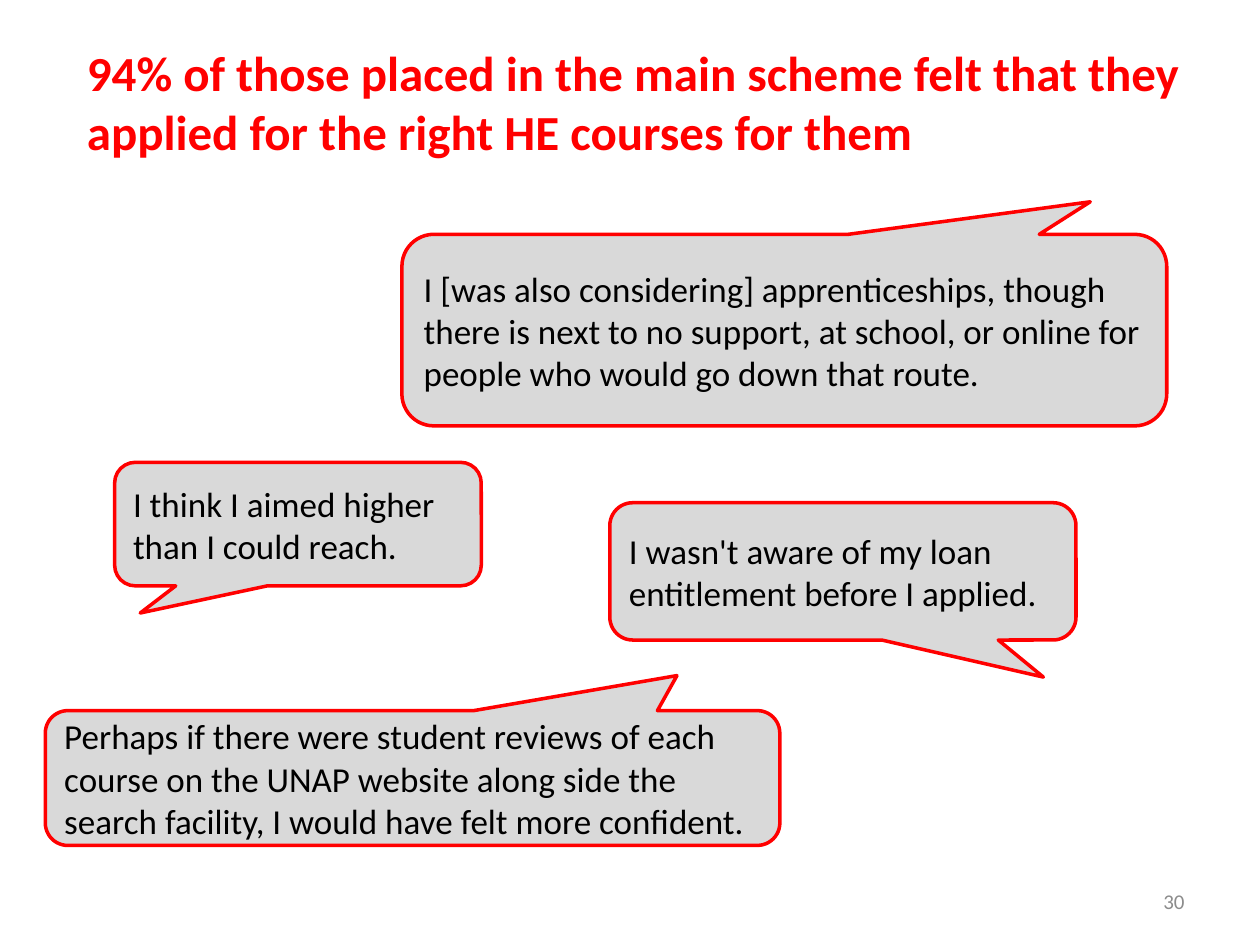
from pptx import Presentation, util as u
from pptx.dml.color import RGBColor
from pptx.enum import shapes, text

WIDTH, HEIGHT = u.Inches(10), u.Inches(7.5)
FONT = "Calibri"
RED, GREY, BLACK, MUTED = "FF0000", "D9D9D9", "000000", "8C8C8C"

# Places are left, top, width, height in percent of the slide
TITLE = "94% of those placed in the main scheme felt that they applied for the right HE courses for them"
TITLE_PLACE = (5.9, 3.87, 89.1, 13.87)
NUMBER = "30"
NUMBER_PLACE = (71.7, 92.67, 23.3, 5.33)

# Quote, place, pointer tip as shares of the bubble measured from its centre
QUOTES = [
    ("Perhaps if there were student reviews of each course on the UNAP website "
     "along side the search facility, I would have felt more confident.",
     (3.6, 75.2, 58.3, 14.27), (0.36, -0.76)),
    ("I wasn't aware of my loan entitlement before I applied.",
     (48.4, 53.2, 37, 14.53), (0.43, 0.77)),
    ("I think I aimed higher than I could reach.",
     (9.1, 48.93, 29.1, 13.07), (-0.43, 0.72)),
    ("I [was also considering] apprenticeships, though there is next to no support, "
     "at school, or online for people who would go down that route.",
     (31.9, 24.8, 60.7, 20.27), (0.4, -0.67)),
]


def color(value):
    return RGBColor.from_string(value)


def area(place):
    return [int(share * side / 100) for share, side in zip(place, (WIDTH, HEIGHT) * 2)]


def write(shape, words, size, ink, bold=False,
          align=text.PP_ALIGN.LEFT, anchor=text.MSO_ANCHOR.MIDDLE):
    frame = shape.text_frame
    frame.text = words
    frame.word_wrap = True
    frame.auto_size = text.MSO_AUTO_SIZE.NONE
    frame.vertical_anchor = anchor
    para = frame.paragraphs[0]
    para.alignment = align
    font = para.runs[0].font
    font.name, font.size, font.bold = FONT, u.Pt(size), bold
    font.color.rgb = color(ink)


def add_bubble(page, quote, place, tip):
    bubble = page.shapes.add_shape(
        shapes.MSO_SHAPE.ROUNDED_RECTANGULAR_CALLOUT, *area(place))
    bubble.adjustments[0], bubble.adjustments[1] = tip
    bubble.shadow.inherit = False
    bubble.fill.solid()
    bubble.fill.fore_color.rgb = color(GREY)
    bubble.line.color.rgb = color(RED)
    bubble.line.width = u.Pt(2)
    write(bubble, quote, 20, BLACK)


def main():
    deck = Presentation()
    deck.slide_width, deck.slide_height = WIDTH, HEIGHT
    page = deck.slides.add_slide(deck.slide_layouts.get_by_name("Title Only"))

    # Title
    title = page.shapes.title
    title.left, title.top, title.width, title.height = area(TITLE_PLACE)
    write(title, TITLE, 28, RED, bold=True, anchor=text.MSO_ANCHOR.TOP)

    # Applicant quotes
    for quote in QUOTES:
        add_bubble(page, *quote)

    # Page number
    number = page.shapes.add_textbox(*area(NUMBER_PLACE))
    write(number, NUMBER, 12, MUTED, align=text.PP_ALIGN.RIGHT)

    deck.save("out.pptx")


if __name__ == "__main__":
    main()
